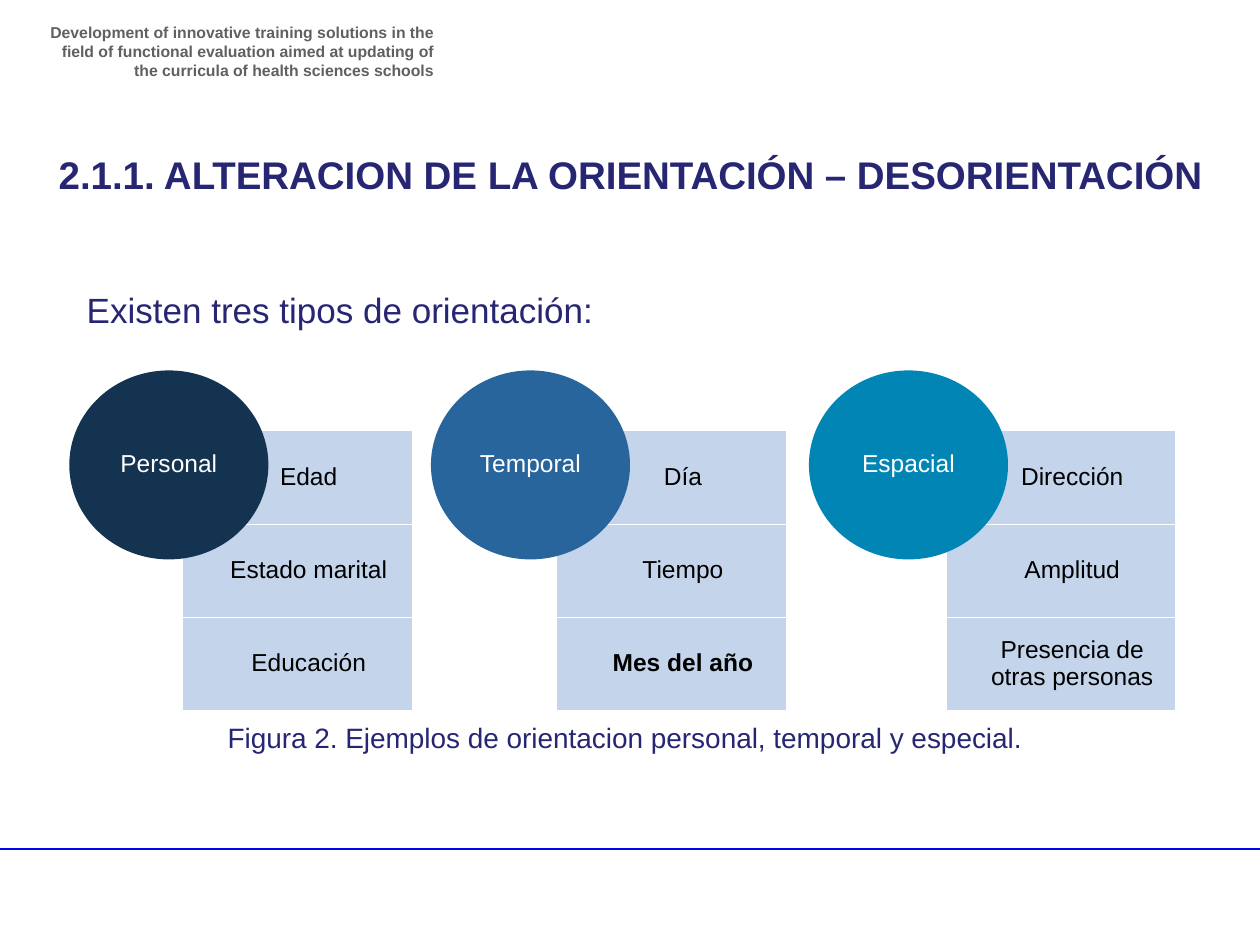
from dataclasses import dataclass

from lxml.etree import SubElement
from pptx import Presentation
from pptx.dml.color import RGBColor
from pptx.enum.shapes import MSO_CONNECTOR, MSO_SHAPE
from pptx.enum.text import MSO_ANCHOR, MSO_AUTO_SIZE, PP_ALIGN
from pptx.oxml.ns import qn
from pptx.shapes.autoshape import Shape
from pptx.slide import Slide
from pptx.text.text import TextFrame
from pptx.util import Inches, Pt


@dataclass(frozen=True)
class Theme:
    font: str = "Arial"
    navy: str = "262673"
    gray: str = "606060"
    black: str = "000000"
    white: str = "FFFFFF"
    cell: str = "BDD0E9"
    rule: str = "0404E6"
    cell_alpha: int = 90000
    header_size: int = 9
    label_size: int = 14
    caption_size: int = 16
    body_size: int = 20
    title_size: int = 22


@dataclass(frozen=True)
class Orientation:
    name: str
    color: str
    circle_left: float
    cells_left: float
    examples: tuple[str, ...]
    bold_example: str = ""


THEME = Theme()
CIRCLE_TOP, CIRCLE_WIDTH, CIRCLE_HEIGHT = 2.94, 1.58, 1.5
CELL_TOP, CELL_WIDTH, CELL_HEIGHT = 3.42, 1.82, 0.74

ORIENTATIONS = (
    Orientation("Personal", "143350", 0.55, 1.45,
                ("Edad", "Estado marital", "Educación")),
    Orientation("Temporal", "28659C", 3.42, 4.42,
                ("Día", "Tiempo", "Mes del año"), "Mes del año"),
    Orientation("Espacial", "0085B4", 6.42, 7.51,
                ("Dirección", "Amplitud", "Presencia de otras personas")),
)


def write(frame: TextFrame, text: str, size: int, color: str,
          align: PP_ALIGN = PP_ALIGN.CENTER, bold: bool = False) -> None:
    frame.word_wrap = True
    para = frame.paragraphs[0]
    para.text = text
    para.alignment = align
    para.font.name = THEME.font
    para.font.size = Pt(size)
    para.font.bold = bold
    para.font.color.rgb = RGBColor.from_string(color)


def add_text(page: Slide, left: float, top: float, width: float, height: float,
             text: str, size: int, color: str,
             align: PP_ALIGN = PP_ALIGN.CENTER, bold: bool = False) -> None:
    box = page.shapes.add_textbox(Inches(left), Inches(top), Inches(width), Inches(height))
    write(box.text_frame, text, size, color, align, bold)


def add_label(page: Slide, kind: MSO_SHAPE, left: float, top: float,
              width: float, height: float, text: str, fill: str, color: str,
              insets: tuple[float, float, float, float], bold: bool = False) -> Shape:
    shape = page.shapes.add_shape(kind, Inches(left), Inches(top), Inches(width), Inches(height))
    shape.shadow.inherit = False
    shape.fill.solid()
    shape.fill.fore_color.rgb = RGBColor.from_string(fill)
    shape.line.fill.background()
    frame = shape.text_frame
    frame.vertical_anchor = MSO_ANCHOR.MIDDLE
    frame.margin_left, frame.margin_top, frame.margin_right, frame.margin_bottom = map(Inches, insets)
    write(frame, text, THEME.label_size, color, bold=bold)
    frame.paragraphs[0].line_spacing = 0.9
    return shape


def add_orientation(page: Slide, orientation: Orientation) -> None:
    for row, example in enumerate(orientation.examples):
        cell = add_label(page, MSO_SHAPE.RECTANGLE, orientation.cells_left,
                         CELL_TOP + row * CELL_HEIGHT, CELL_WIDTH, CELL_HEIGHT,
                         example, THEME.cell, THEME.black, (0.29, 0.11, 0.11, 0.11),
                         example == orientation.bold_example)
        cell.line.color.rgb = RGBColor.from_string(THEME.white)
        cell.line.width = Pt(0.5)
        tint = cell.element.spPr.find(qn("a:solidFill")).find(qn("a:srgbClr"))
        SubElement(tint, qn("a:alpha"), val=str(THEME.cell_alpha))
    add_label(page, MSO_SHAPE.OVAL, orientation.circle_left, CIRCLE_TOP,
              CIRCLE_WIDTH, CIRCLE_HEIGHT, orientation.name, orientation.color,
              THEME.white, (0, 0, 0, 0))


def add_rule(page: Slide) -> None:
    rule = page.shapes.add_connector(MSO_CONNECTOR.STRAIGHT, Inches(-0.05), Inches(6.74),
                                     Inches(10), Inches(6.74))
    rule.line.color.rgb = RGBColor.from_string(THEME.rule)
    rule.line.width = Pt(1)
    SubElement(rule.element.spPr, qn("a:effectLst"))


def set_title(page: Slide, text: str) -> None:
    title = page.shapes.title
    title.left, title.top, title.width, title.height = map(Inches, (0.2, 1.15, 9.61, 0.47))
    title.text_frame.auto_size = MSO_AUTO_SIZE.NONE
    title.text_frame.vertical_anchor = MSO_ANCHOR.MIDDLE
    write(title.text_frame, text, THEME.title_size, THEME.navy, bold=True)


def main() -> None:
    deck = Presentation()
    deck.slide_width, deck.slide_height = Inches(10), Inches(7.5)
    page = deck.slides.add_slide(deck.slide_layouts[5])
    set_title(page, "2.1.1. ALTERACION DE LA ORIENTACIÓN – DESORIENTACIÓN")
    add_rule(page)
    add_text(page, 0.28, 0.13, 3.26, 0.47,
             "Development of innovative training solutions in the ﬁeld of functional "
             "evaluation aimed at updating of the curricula of health sciences schools",
             THEME.header_size, THEME.gray, PP_ALIGN.RIGHT, True)
    for orientation in ORIENTATIONS:
        add_orientation(page, orientation)
    add_text(page, 0.55, 5.67, 8.82, 0.37,
             "Figura 2. Ejemplos de orientacion personal, temporal y especial.",
             THEME.caption_size, THEME.navy)
    add_text(page, 0.59, 2.24, 8.74, 0.44, "Existen tres tipos de orientación:",
             THEME.body_size, THEME.navy, PP_ALIGN.LEFT)
    deck.save("out.pptx")


if __name__ == "__main__":
    main()
